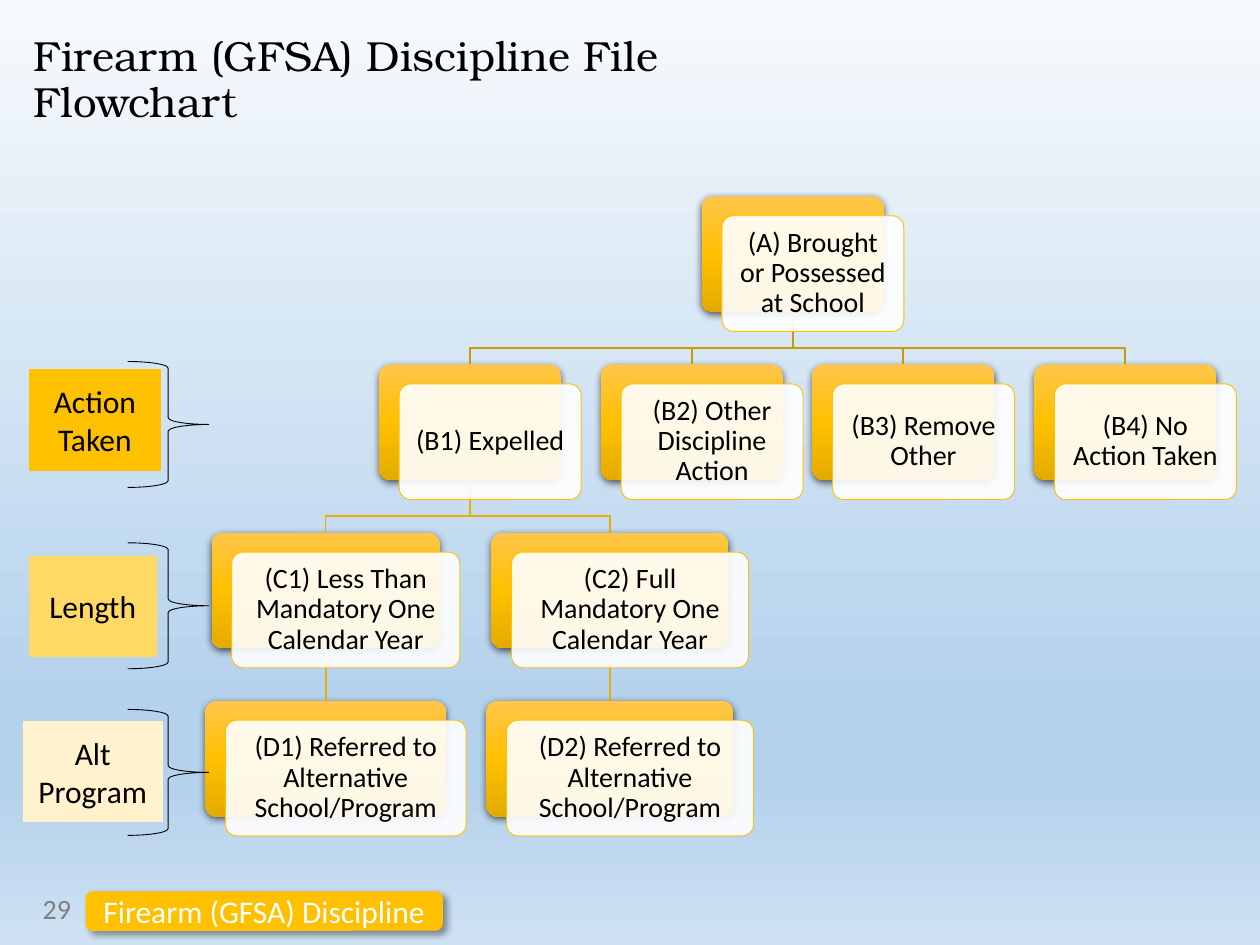
import pptx
import pptx.util
import pptx.dml.color
import pptx.enum.shapes
import pptx.enum.text
import pptx.oxml
import pptx.oxml.ns

Pt = pptx.util.Pt
SHAPE = pptx.enum.shapes.MSO_SHAPE
ALIGN = pptx.enum.text.PP_ALIGN
ANCHOR = pptx.enum.text.MSO_ANCHOR
qn = pptx.oxml.ns.qn

# Content: key -> (text, row, centre x, width)
TITLE = "Firearm (GFSA) Discipline File Flowchart"
FOOTER = "Firearm (GFSA) Discipline"
PAGE = "29"
NODES = {
    "A": ("(A) Brought or Possessed at School", 0, 453, 104),
    "B1": ("(B1) Expelled", 1, 268.6, 104),
    "B2": ("(B2) Other Discipline Action", 1, 395.4, 104),
    "B3": ("(B3) Remove Other", 1, 516.2, 104),
    "B4": ("(B4) No Action Taken", 1, 643, 104),
    "C1": ("(C1) Less Than Mandatory One Calendar Year", 2, 186.1, 130.4),
    "C2": ("(C2) Full Mandatory One Calendar Year", 2, 348.5, 135.4),
    "D1": ("(D1) Referred to Alternative School/Program", 3, 186.1, 137.6),
    "D2": ("(D2) Referred to Alternative School/Program", 3, 348.5, 141.2),
}
LINKS = [("A", "B4"), ("A", "B3"), ("A", "B2"), ("A", "B1"),
         ("B1", "C1"), ("B1", "C2"), ("C1", "D1"), ("C2", "D2")]
# Row labels: text, left, top, width, brace top, fill
LABELS = [
    ("Action Taken", 17, 211.5, 74.5, 206.6, "FFC000"),
    ("Length", 17, 318, 72, 310.2, "FFD966"),
    ("Alt Program", 13.5, 412.5, 79, 405.4, "FFF2CC"),
]

THEME = {
    "font": "Calibri", "title_font": "TeX Gyre Bonum",
    "title": 24, "node": 16, "label": 18, "page": 16,
    "black": "000000", "white": "FFFFFF", "grey": "808080", "gold": "FFC000",
    "top_link": "CC9A00", "link": "E7AE00",
    "sky": [(0, "F7FAFD"), (74, "B5D2EC"), (83, "B5D2EC"), (100, "CEE1F2")],
    "metal": [(0, "FFC64B"), (50, "FFC000"), (100, "E3AB00")],
}
ROW_TOP, ROW_STEP, NODE_H = 112.2, 96.1, 66.1
CARD_DX, CARD_DY = 11.5, 11.1
BEND = 9.6
LABEL_H, BRACE_X, BRACE_W, BRACE_H = 57, 72.9, 46.4, 72


def rgb(value):
    return pptx.dml.color.RGBColor.from_string(value)


def set_gradient(fill, element, stops):
    """Vertical gradient with any number of stops."""
    fill.gradient()
    fill.gradient_angle = 270
    stop_list = element.find(".//" + qn("a:gsLst"))
    for old in list(stop_list):
        stop_list.remove(old)
    for pos, color in stops:
        gs = pptx.oxml.ns.qn("a:gs")
        gs = stop_list.makeelement(gs, {"pos": str(pos * 1000)})
        gs.append(gs.makeelement(qn("a:srgbClr"), {"val": color}))
        stop_list.append(gs)


def add_shadow(sp, alpha, blur, dist, angle):
    effects = sp.element.spPr.find(qn("a:effectLst"))
    effects.append(pptx.oxml.parse_xml(
        f'<a:outerShdw {pptx.oxml.ns.nsdecls("a")} blurRad="{Pt(blur)}" '
        f'dist="{Pt(dist)}" dir="{angle * 60000}" algn="ctr" rotWithShape="0">'
        f'<a:srgbClr val="000000"><a:alpha val="{alpha * 1000}"/></a:srgbClr>'
        '</a:outerShdw>'))


def add_box(kind, x, y, w, h, fill=None, line=None, line_w=1):
    sp = s.shapes.add_shape(kind, Pt(x), Pt(y), Pt(w), Pt(h))
    sp.shadow.inherit = False
    style_line(sp, line, line_w)
    if fill:
        sp.fill.solid()
        sp.fill.fore_color.rgb = rgb(fill)
    else:
        sp.fill.background()
    return sp


def style_line(sp, color, width=1):
    if color:
        sp.line.color.rgb = rgb(color)
        sp.line.width = Pt(width)
    else:
        sp.line.fill.background()


def write(sp, text, size, color="black", font="font", align=ALIGN.CENTER,
          anchor=ANCHOR.MIDDLE, spacing=None, inset=None):
    tf = sp.text_frame
    tf.word_wrap = True
    tf.vertical_anchor = anchor
    if inset is not None:
        tf.margin_left = tf.margin_right = Pt(inset)
        tf.margin_top = tf.margin_bottom = Pt(inset)
    p = tf.paragraphs[0]
    p.alignment = align
    if spacing:
        p.line_spacing = spacing
    r = p.add_run()
    r.text = text
    r.font.name = THEME[font]
    r.font.size = Pt(THEME[size])
    r.font.color.rgb = rgb(THEME[color])


# Slide, background and title
prs = pptx.Presentation()
prs.slide_width, prs.slide_height = Pt(720), Pt(540)
s = prs.slides.add_slide(prs.slide_layouts[5])
set_gradient(s.background.fill, s.element, THEME["sky"])
title = s.shapes.title
title.left, title.top, title.width, title.height = Pt(19.4), Pt(20.2), Pt(478.8), Pt(59.8)
write(title, TITLE, "title", font="title_font", align=ALIGN.LEFT,
      anchor=ANCHOR.TOP, spacing=0.9, inset=0)

# Gold backs of the nodes
backs = {}
for key, (text, row, center, w) in NODES.items():
    sp = add_box(SHAPE.ROUNDED_RECTANGLE, center - w / 2,
                 ROW_TOP + row * ROW_STEP, w, NODE_H)
    sp.adjustments[0] = 0.1
    set_gradient(sp.fill, sp.element, THEME["metal"])
    add_shadow(sp, 63, 4.5, 1.5, 90)
    backs[key] = sp

# Links: straight below a parent, otherwise bent just above the child
for parent, child in LINKS:
    x1, x2 = NODES[parent][2], NODES[child][2]
    if x1 == x2:
        link = s.shapes.add_connector(
            pptx.enum.shapes.MSO_CONNECTOR.STRAIGHT, 0, 0, 0, 0)
        link.begin_connect(backs[parent], 2)
        link.end_connect(backs[child], 0)
        props = link.element.spPr
        props.append(props.makeelement(qn("a:effectLst"), {}))
    else:
        y1 = ROW_TOP + NODES[parent][1] * ROW_STEP + NODE_H
        y2 = ROW_TOP + NODES[child][1] * ROW_STEP
        fb = s.shapes.build_freeform(Pt(x1), Pt(y1))
        fb.add_line_segments([(Pt(x1), Pt(y2 - BEND)), (Pt(x2), Pt(y2 - BEND)),
                              (Pt(x2), Pt(y2))], close=False)
        link = fb.convert_to_shape()
        link.shadow.inherit = False
        link.fill.background()
    style_line(link, THEME["top_link" if parent == "A" else "link"])

# White cards with the node text
for text, row, center, w in NODES.values():
    sp = add_box(SHAPE.ROUNDED_RECTANGLE, center - w / 2 + CARD_DX,
                 ROW_TOP + row * ROW_STEP + CARD_DY, w, NODE_H,
                 THEME["white"], THEME["gold"], 0.5)
    sp.adjustments[0] = 0.1
    color = sp.element.spPr.find(qn("a:solidFill"))[0]
    color.append(color.makeelement(qn("a:alpha"), {"val": "90000"}))
    write(sp, text, "node", spacing=0.9, inset=7)

# Page number and footer tag
page = s.shapes.add_textbox(Pt(17.3), Pt(506), Pt(162), Pt(28.8))
write(page, PAGE, "page", "grey", align=ALIGN.LEFT, anchor=ANCHOR.TOP)
tag = add_box(SHAPE.ROUNDED_RECTANGLE, 49.4, 509.8, 203.2, 21.6,
              THEME["gold"], THEME["gold"])
add_shadow(tag, 40, 4, 3, 45)
write(tag, FOOTER, "label", "white")

# Row labels with braces
for text, x, y, w, brace_y, fill in LABELS:
    add_box(SHAPE.RIGHT_BRACE, BRACE_X, brace_y, BRACE_W, BRACE_H,
            line=THEME["black"], line_w=0.5)
    write(add_box(SHAPE.RECTANGLE, x, y, w, LABEL_H, fill, fill), text, "label")

prs.save("out.pptx")
